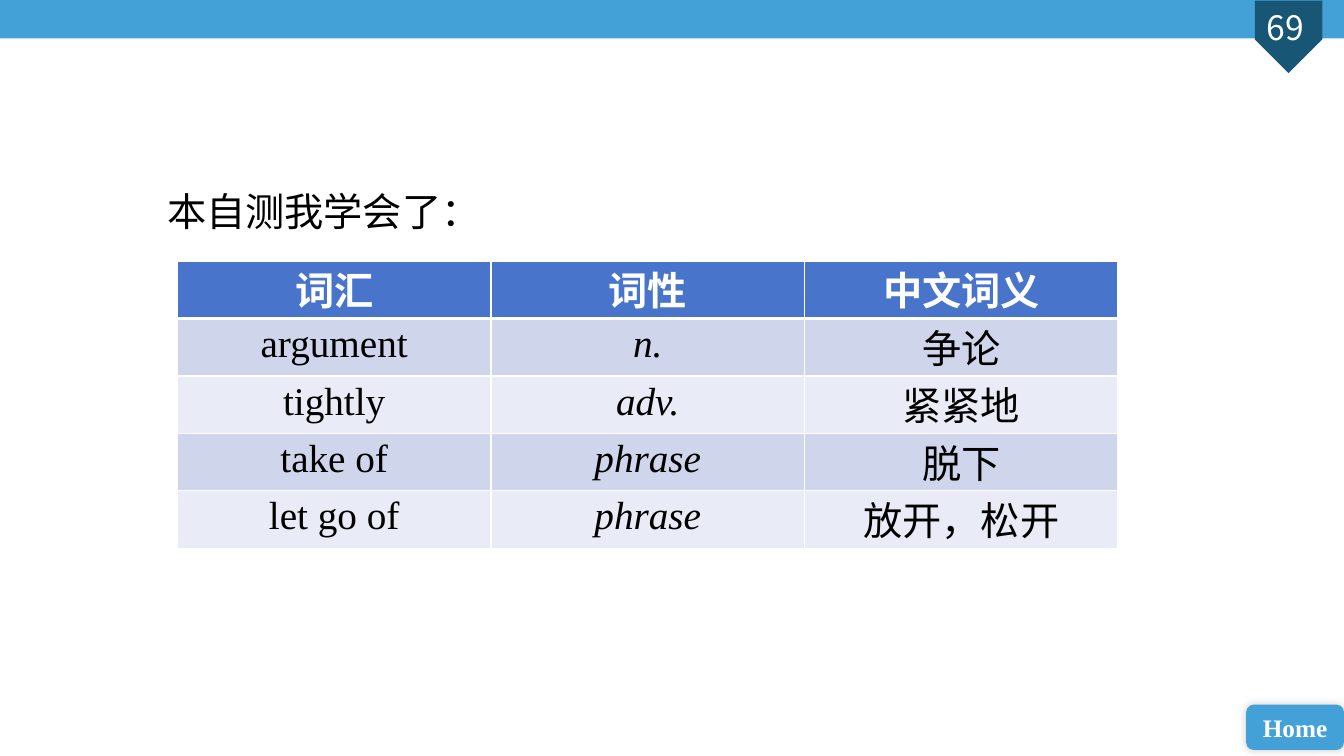
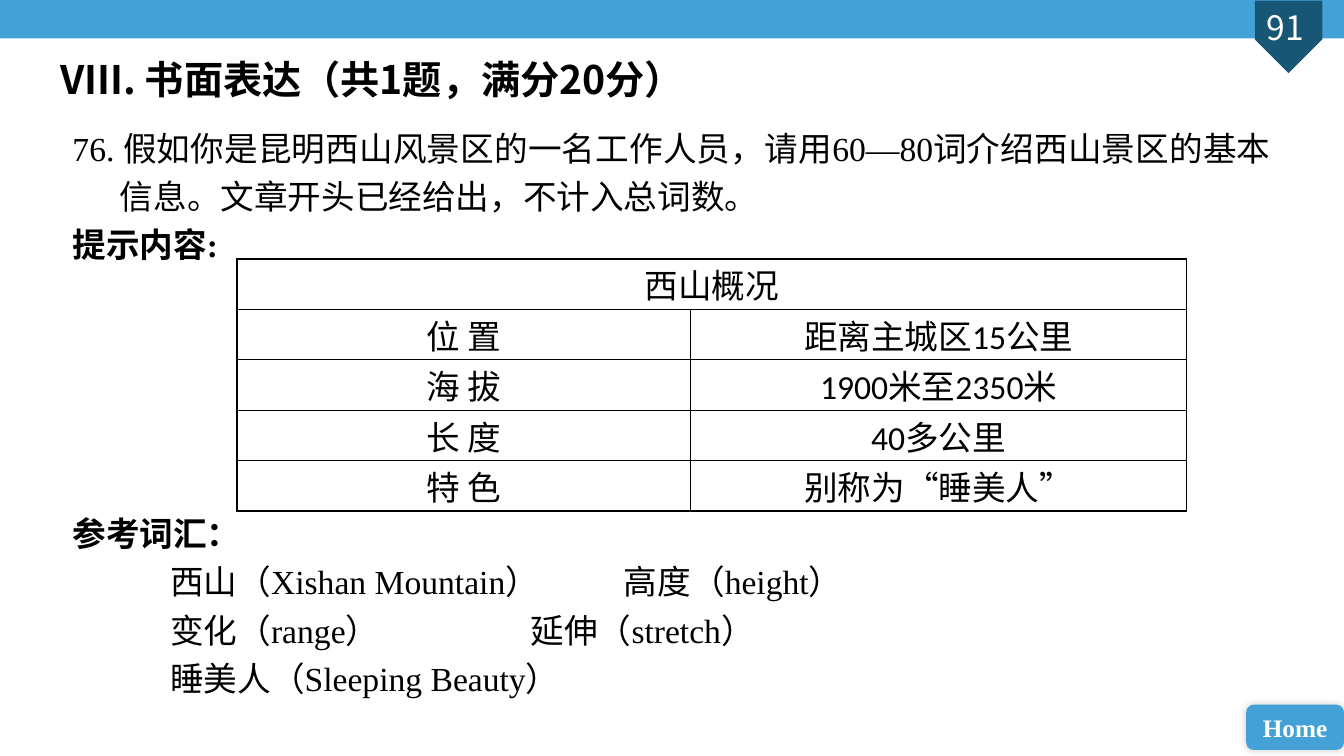
from lxml import etree
from pptx import Presentation
from pptx.dml.color import RGBColor
from pptx.enum.shapes import MSO_SHAPE as Shape
from pptx.enum.text import MSO_ANCHOR as Anchor, PP_ALIGN as Align
from pptx.oxml import parse_xml
from pptx.oxml.ns import nsdecls, qn
from pptx.util import Inches, Pt

BLUE = RGBColor(0x43, 0xA1, 0xD8)
NAVY = RGBColor(0x18, 0x56, 0x75)
HEADER_BLUE = RGBColor(0x48, 0x74, 0xCB)
BAND_DARK = RGBColor(0xCF, 0xD6, 0xEC)
BAND_LIGHT = RGBColor(0xE9, 0xEB, 0xF6)
WHITE = RGBColor(0xFF, 0xFF, 0xFF)
BLACK = RGBColor(0, 0, 0)

SERIF = "Times New Roman"
SANS = "Calibri"
CJK = "Noto Sans CJK SC"

SLIDE_W, SLIDE_H = 13.33, 7.5
SHADOW = (
    f'<a:effectLst {nsdecls("a")}><a:outerShdw blurRad="76200" dist="0" dir="18900000">'
    '<a:srgbClr val="000000"><a:alpha val="20000"/></a:srgbClr></a:outerShdw></a:effectLst>'
)


def write(paragraph, text, size, font, color=BLACK, bold=False, italic=False,
          align=Align.LEFT, leading=None):
    """Set a paragraph's text and format; leading is the line pitch in points."""
    paragraph.text = text
    paragraph.alignment = align
    if leading:
        paragraph.line_spacing = Pt(leading)
    for run in paragraph.runs:
        run.font.size = Pt(size)
        run.font.name = font
        run.font.bold = bold
        run.font.italic = italic
        run.font.color.rgb = color
        east_asian = etree.SubElement(run.font._element, qn("a:ea"))
        east_asian.set("typeface", CJK)


def add_text_frame(slide, left, top, width, height):
    box = slide.shapes.add_textbox(Inches(left), Inches(top), Inches(width), Inches(height))
    box.text_frame.word_wrap = True
    return box.text_frame


def add_plain_shape(slide, kind, left, top, width, height, color):
    shape = slide.shapes.add_shape(
        kind, Inches(left), Inches(top), Inches(width), Inches(height))
    shape.shadow.inherit = False
    shape.fill.solid()
    shape.fill.fore_color.rgb = color
    shape.line.fill.background()
    return shape


def add_frame(prs, number):
    """Add a slide with the top band, page marker and home button."""
    slide = prs.slides.add_slide(prs.slide_layouts[6])
    add_plain_shape(slide, Shape.RECTANGLE, 0, 0, SLIDE_W, 0.38, BLUE)
    marker = add_plain_shape(slide, Shape.PENTAGON, 12.42, 0.03, 0.72, 0.67, NAVY)
    marker.rotation = 90
    page = add_text_frame(slide, 12.26, 0, 0.98, 0.5)
    write(page.paragraphs[0], str(number), 24, CJK, WHITE, align=Align.CENTER, leading=30)

    home = add_plain_shape(slide, Shape.ROUNDED_RECTANGLE, 12.36, 6.99, 0.97, 0.45, BLUE)
    properties = home._element.spPr
    properties.replace(properties.find(qn("a:effectLst")), parse_xml(SHADOW))
    home.text_frame.vertical_anchor = Anchor.MIDDLE
    write(home.text_frame.paragraphs[0], "Home", 18, SERIF, WHITE, bold=True,
          align=Align.CENTER)
    return slide


def set_borders(cell, color, top=1, bottom=1):
    widths = {"L": 1, "R": 1, "T": top, "B": bottom}
    for side, points in widths.items():
        cell._tc.get_or_add_tcPr().append(parse_xml(
            f'<a:ln{side} {nsdecls("a")} w="{Pt(points)}"><a:solidFill>'
            f'<a:srgbClr val="{color}"/></a:solidFill></a:ln{side}>'))


def add_grid(slide, left, top, col_widths, row_height, row_count):
    frame = slide.shapes.add_table(
        row_count, len(col_widths), Inches(left), Inches(top),
        Inches(sum(col_widths)), Inches(row_height * row_count))
    table = frame.table
    for column, width in zip(table.columns, col_widths):
        column.width = Inches(width)
    for row in table.rows:
        row.height = Inches(row_height)
    for cell in table.iter_cells():
        cell.margin_top = cell.margin_bottom = 0
    return table


def add_vocabulary_table(slide, left, top, rows):
    table = add_grid(slide, left, top, [3.11] * 3, 0.57, len(rows))
    for r, row in enumerate(rows):
        header = r == 0
        fill = HEADER_BLUE if header else (BAND_LIGHT, BAND_DARK)[r % 2]
        for c, text in enumerate(row):
            cell = table.cell(r, c)
            set_borders(cell, WHITE, top=3 if r == 1 else 1, bottom=3 if header else 1)
            cell.fill.solid()
            cell.fill.fore_color.rgb = fill
            write(cell.text_frame.paragraphs[0], text, 28, SERIF,
                  WHITE if header else BLACK, bold=header,
                  italic=c == 1 and not header, align=Align.CENTER,
                  leading=34 if text.isascii() else 40)


def add_facts_table(slide, left, top, heading, facts):
    table = add_grid(slide, left, top, [4.5, 4.92], 0.5, len(facts) + 1)
    table.cell(0, 0).merge(table.cell(0, 1))
    for r, row in enumerate([(heading, ""), *facts]):
        for c, text in enumerate(row):
            cell = table.cell(r, c)
            set_borders(cell, BLACK)
            cell.fill.background()
            if text:
                write(cell.text_frame.paragraphs[0], text, 24, SANS,
                      align=Align.CENTER, leading=35.5)


def add_task_text(slide, left, top, lines):
    """Write lines of (text, bold, first-line indent, space before)."""
    frame = add_text_frame(slide, left, top, 12.08, 5.88)
    for i, (text, bold, indent, gap) in enumerate(lines):
        paragraph = frame.add_paragraph() if i else frame.paragraphs[0]
        write(paragraph, text, 24, SERIF, bold=bold, align=Align.JUSTIFY, leading=34.4)
        paragraph.space_before = Pt(gap)
        properties = paragraph._p.get_or_add_pPr()
        properties.set("marL", str(Inches(0.47)))
        properties.set("indent", str(Inches(indent)))


def build_vocabulary_slide(prs):
    slide = add_frame(prs, 69)
    add_vocabulary_table(slide, 1.76, 2.59, [
        ("词汇", "词性", "中文词义"),
        ("argument", "n.", "争论"),
        ("tightly", "adv.", "紧紧地"),
        ("take of", "phrase", "脱下"),
        ("let go of", "phrase", "放开，松开"),
    ])
    label = add_text_frame(slide, 1.56, 1.78, 3.87, 0.57)
    write(label.paragraphs[0], "本自测我学会了：", 28, SANS, leading=35.5)


def build_writing_slide(prs):
    slide = add_frame(prs, 91)
    title = add_text_frame(slide, 0.5, 0.47, 12.43, 0.57)
    write(title.paragraphs[0], "VIII. 书面表达（共1题，满分20分）", 28, CJK, bold=True,
          leading=35.5)
    hanging, inset = -0.5, 0.5
    table_gap = 172
    add_task_text(slide, 0.62, 1.14, [
        ("76. 假如你是昆明西山风景区的一名工作人员，请用60—80词介绍西山景区的基本信息。"
         "文章开头已经给出，不计入总词数。", False, hanging, 0),
        ("提示内容:", True, hanging, 0),
        ("参考词汇：", True, hanging, table_gap),
        ("西山（Xishan Mountain）\t \t高度（height）", False, inset, 0),
        ("变化（range）\t\t\t 延伸（stretch）", False, inset, 0),
        ("睡美人（Sleeping Beauty）", False, inset, 0),
    ])
    add_facts_table(slide, 2.35, 2.57, "西山概况", [
        ("位 置", "距离主城区15公里"),
        ("海 拔", "1900米至2350米"),
        ("长 度", "40多公里"),
        ("特 色", "别称为“睡美人”"),
    ])


def main():
    prs = Presentation()
    prs.slide_width, prs.slide_height = Inches(SLIDE_W), Inches(SLIDE_H)
    build_vocabulary_slide(prs)
    build_writing_slide(prs)
    prs.save("out.pptx")


if __name__ == "__main__":
    main()
